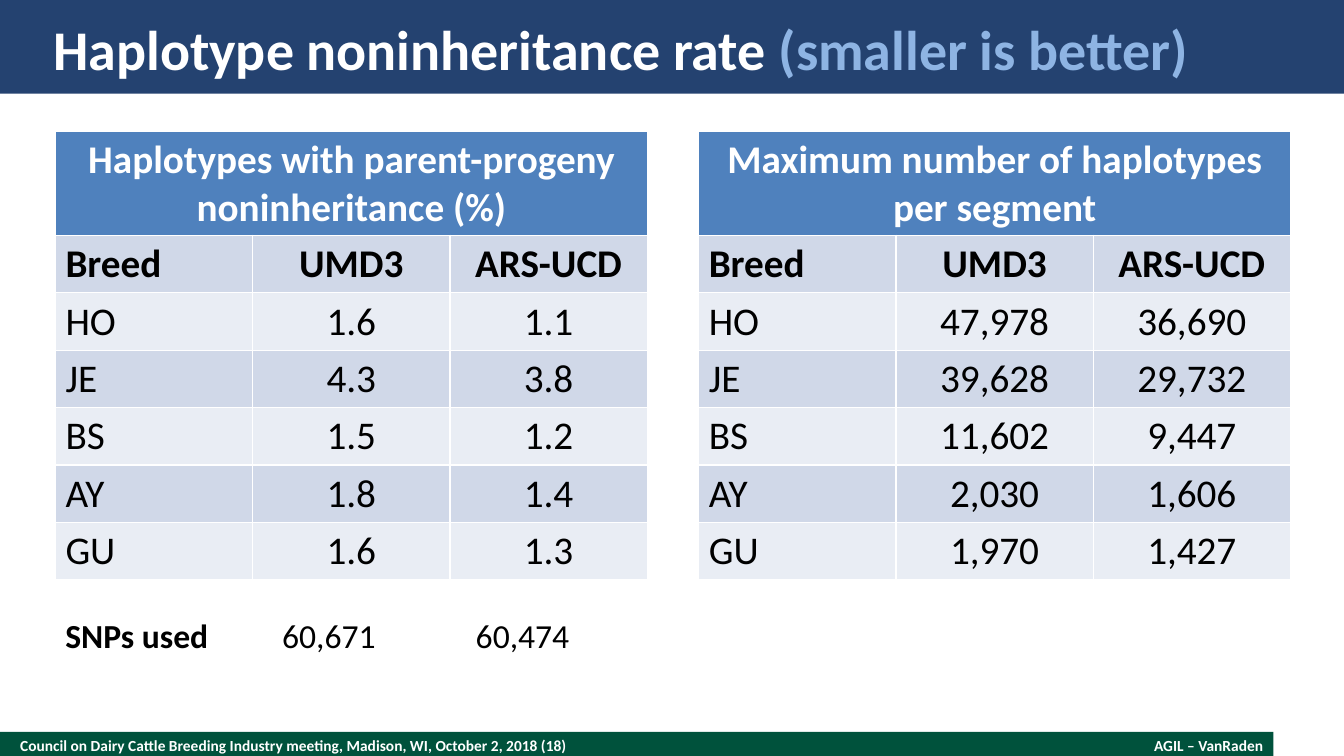
from lxml import etree
from pptx import Presentation
from pptx.dml.color import RGBColor
from pptx.enum.shapes import MSO_SHAPE
from pptx.enum.text import MSO_ANCHOR, PP_ALIGN
from pptx.oxml.ns import qn
from pptx.util import Inches, Pt

RECT = MSO_SHAPE.RECTANGLE
MIDDLE = MSO_ANCHOR.MIDDLE
LEFT, CENTER, RIGHT = PP_ALIGN.LEFT, PP_ALIGN.CENTER, PP_ALIGN.RIGHT

WHITE = RGBColor(0xFF, 0xFF, 0xFF)
BLACK = RGBColor(0x00, 0x00, 0x00)
GREEN = RGBColor(0x00, 0x52, 0x3C)
NAVY = RGBColor(0x24, 0x42, 0x70)
SKY = RGBColor(0x8E, 0xB4, 0xE3)
BLUE = RGBColor(0x4F, 0x81, 0xBD)
BANDS = [RGBColor(0xD0, 0xD8, 0xE8), RGBColor(0xE9, 0xED, 0xF4)]


def style(para, size, color, bold, align=LEFT):
    para.alignment = align
    font = para.font
    font.name = "Calibri"
    font.size = Pt(size)
    font.bold = bold
    font.color.rgb = color


def add_label(box, text, size, align=LEFT):
    """Add a white bold line of text with no margins; return its paragraph."""
    frame = slide.shapes.add_textbox(*map(Inches, box)).text_frame
    frame.word_wrap = True
    frame.vertical_anchor = MIDDLE
    frame.margin_left = frame.margin_right = 0
    frame.margin_top = frame.margin_bottom = 0
    para = frame.paragraphs[0]
    para.add_run().text = text
    style(para, size, WHITE, True, align)
    return para


prs = Presentation()
prs.slide_width = Inches(13.33)
prs.slide_height = Inches(7.5)
slide = prs.slides.add_slide(prs.slide_layouts[6])

# Footer and title bars
bars = [((0, 7.26, 12.63, 0.27), GREEN), ((0, 0, 13.33, 0.93), NAVY)]
for box, color in bars:
    bar = slide.shapes.add_shape(RECT, *map(Inches, box))
    bar.shadow.inherit = False
    bar.fill.solid()
    bar.fill.fore_color.rgb = color
    bar.line.fill.background()

add_label((0.2, 7.26, 8.67, 0.27),
          "Council on Dairy Cattle Breeding Industry meeting, "
          "Madison, WI, October 2, 2018 (18)", 11)
add_label((9.6, 7.3, 2.93, 0.19), "AGIL – VanRaden", 11, RIGHT)
title = add_label((0.53, 0.13, 12.27, 0.7), "Haplotype noninheritance rate ", 40)
hint = title.add_run()
hint.text = "(smaller is better)"
hint.font.color.rgb = SKY

# Tables by breed
HEAD = ("Breed", "UMD3", "ARS-UCD")
tables = [
    (0.55, "Haplotypes with parent-progeny noninheritance (%)", [
        HEAD,
        ("HO", "1.6", "1.1"),
        ("JE", "4.3", "3.8"),
        ("BS", "1.5", "1.2"),
        ("AY", "1.8", "1.4"),
        ("GU", "1.6", "1.3"),
    ]),
    (6.93, "Maximum number of haplotypes per segment", [
        HEAD,
        ("HO", "47,978", "36,690"),
        ("JE", "39,628", "29,732"),
        ("BS", "11,602", "9,447"),
        ("AY", "2,030", "1,606"),
        ("GU", "1,970", "1,427"),
    ]),
]
for left, head, rows in tables:
    table = slide.shapes.add_table(
        len(rows) + 1, len(HEAD), Inches(left), Inches(1.3),
        Inches(5.87), Inches(4.43)).table
    for row in table.rows:
        row.height = Inches(0.57)
    table.rows[0].height = Inches(1.03)

    top = table.cell(0, 0)
    top.merge(table.cell(0, len(HEAD) - 1))
    top.text = head
    top.fill.solid()
    top.fill.fore_color.rgb = BLUE
    style(top.text_frame.paragraphs[0], 28, WHITE, True, CENTER)

    for r, row in enumerate(rows):
        for c, text in enumerate(row):
            cell = table.cell(r + 1, c)
            cell.text = text
            cell.fill.solid()
            cell.fill.fore_color.rgb = BANDS[r % 2]
            style(cell.text_frame.paragraphs[0], 28, BLACK, r == 0,
                  CENTER if c else LEFT)

# SNP counts, set on tab stops
frame = slide.shapes.add_textbox(
    Inches(0.55), Inches(6.05), Inches(5.25), Inches(0.5)).text_frame
frame.word_wrap = True
para = frame.paragraphs[0]
stops = etree.SubElement(para._p.get_or_add_pPr(), qn("a:tabLst"))
for stop in (2.15, 4.07):
    etree.SubElement(stops, qn("a:tab"), pos=str(Inches(stop)), algn="l")
for text, bold in (("SNPs used", True), ("\t60,671\t60,474", False)):
    run = para.add_run()
    run.text = text
    run.font.bold = bold
style(para, 24, BLACK, None)

prs.save("out.pptx")
